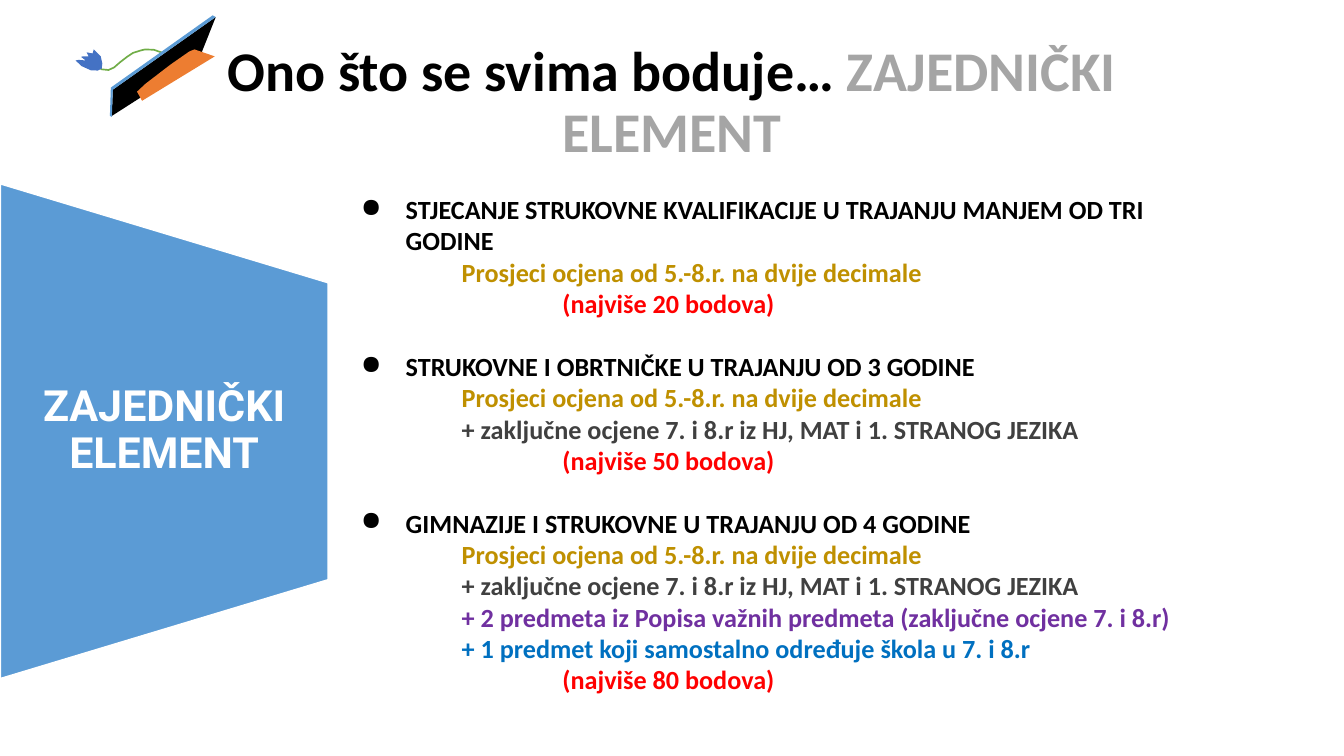
import pptx
import pptx.util
import pptx.dml.color
import pptx.enum.shapes
import pptx.enum.text
import lxml.etree

Pt = pptx.util.Pt
ALIGN = pptx.enum.text.PP_ALIGN
ANCHOR = pptx.enum.text.MSO_ANCHOR
COLORS = {
    "black": "000000", "white": "FFFFFF", "gray": "A5A5A5", "dark": "404040",
    "gold": "BF9000", "red": "FF0000", "purple": "7030A0", "blue": "0070C0",
    "panel": "5B9BD5", "stem": "70AD47", "flower": "4472C4", "orange": "ED7D31",
}
AVERAGE = ("Prosjeci ocjena od 5.-8.r. na dvije decimale", "gold")
GRADES = ("+ zaključne ocjene 7. i 8.r iz HJ, MAT i 1. STRANOG JEZIKA", "dark")
PROGRAMS = [
    ("STJECANJE STRUKOVNE KVALIFIKACIJE U TRAJANJU MANJEM OD TRI GODINE",
     [AVERAGE], "(najviše 20 bodova)"),
    ("STRUKOVNE I OBRTNIČKE U TRAJANJU OD 3 GODINE",
     [AVERAGE, GRADES], "(najviše 50 bodova)"),
    ("GIMNAZIJE I STRUKOVNE U TRAJANJU OD 4 GODINE",
     [AVERAGE, GRADES,
      ("+ 2 predmeta iz Popisa važnih predmeta (zaključne ocjene 7. i 8.r)", "purple"),
      ("+ 1 predmet koji samostalno određuje škola u 7. i 8.r", "blue")],
     "(najviše 80 bodova)"),
]
LINE = 22.4
STEM = [(17, 36.5), (18.5, 38.5), (23.5, 39), (27.5, 37.2), (32, 33.3), (36.7, 29.7),
        (41, 26.8), (46.8, 25), (49.7, 24.3), (56, 24.6), (62.3, 26.8)]
OUTLINES = [
    ("flower", [(13, 24.3), (18, 29.3), (19.1, 34.4), (18.7, 38), (15.8, 39.4),
                (10.8, 39.2), (4.3, 36.2), (0, 32.2), (2.2, 31.8), (7.2, 32.2),
                (4, 29.7), (5, 29.3), (9.4, 29.3), (7.9, 26.4), (12.2, 27.2)]),
    ("black", [(100.1, 1.2), (87.8, 32.2), (25.9, 71.8), (26.6, 53.1)]),
    ("panel", [(97.9, 0), (100.1, 1.2), (26.6, 53.1), (25.9, 72.5), (24.5, 71.8), (25.2, 51.6)]),
    ("orange", [(85, 24.3), (99.4, 29.3), (47.5, 61), (43.9, 54.5), (50, 48.8),
                (68, 35), (81.4, 25.7)]),
]


def rgb(name):
    return pptx.dml.color.RGBColor.from_string(COLORS[name])


def style(r, size, color, font="Calibri"):
    r.font.size = Pt(size)
    r.font.name = font
    r.font.bold = True
    r.font.color.rgb = rgb(color)


def frame(sp, inset_x, inset_y, anchor):
    tf = sp.text_frame
    tf.word_wrap = True
    tf.auto_size = pptx.enum.text.MSO_AUTO_SIZE.NONE
    tf.margin_left = tf.margin_right = Pt(inset_x)
    tf.margin_top = tf.margin_bottom = Pt(inset_y)
    tf.vertical_anchor = anchor
    return tf


def add_title(s, x, y, w, h):
    sp = s.shapes.title
    sp.left, sp.top, sp.width, sp.height = Pt(x), Pt(y), Pt(w), Pt(h)
    p = frame(sp, 7.2, 7.2, ANCHOR.MIDDLE).paragraphs[0]
    p.alignment = ALIGN.CENTER
    p.line_spacing = 0.9
    for text, color in [("Ono što se svima boduje… ", "black"), ("ZAJEDNIČKI ELEMENT", "gray")]:
        r = p.add_run()
        r.text = text
        style(r, 40, color)


def add_panel(s, x, y, w, h):
    sp = s.shapes.add_shape(pptx.enum.shapes.MSO_SHAPE.FLOWCHART_MANUAL_OPERATION,
                            Pt(x + (w - h) / 2), Pt(y + (h - w) / 2), Pt(h), Pt(w))
    sp.rotation = 270
    sp.shadow.inherit = False
    sp.fill.solid()
    sp.fill.fore_color.rgb = rgb("panel")
    sp.line.color.rgb = rgb("white")
    sp.line.width = Pt(1.5)
    label = s.shapes.add_textbox(Pt(x), Pt(y + h / 5), Pt(w), Pt(h * 3 / 5))
    p = frame(label, 15, 0, ANCHOR.MIDDLE).paragraphs[0]
    p.text = "ZAJEDNIČKI ELEMENT"
    p.alignment = ALIGN.CENTER
    p.line_spacing = 0.9
    style(p.runs[0], 30.7, "white", "Roboto")


def add_line(p, text, color, margin, hanging=0, bullet=None):
    p.text = text
    p.line_spacing = Pt(LINE)
    style(p.runs[0], 18.7, color)
    pPr = p._p.get_or_add_pPr()
    pPr.set("marL", str(Pt(margin)))
    pPr.set("indent", str(Pt(-hanging)))
    if bullet:
        ns = pptx.oxml.ns.qn
        clr = lxml.etree.SubElement(pPr, ns("a:buClr"))
        lxml.etree.SubElement(clr, ns("a:srgbClr")).set("val", COLORS["black"])
        lxml.etree.SubElement(pPr, ns("a:buChar")).set("char", bullet)


def add_programs(s, x, y, w, h):
    sp = s.shapes.add_textbox(Pt(x), Pt(y), Pt(w), Pt(h))
    tf = frame(sp, 7.2, 7.2, ANCHOR.TOP)
    for i, (name, parts, limit) in enumerate(PROGRAMS):
        p = tf.add_paragraph() if i else tf.paragraphs[0]
        p.space_before = Pt(LINE if i else 0)
        add_line(p, name, "black", 48, 32, "●")
        for text, color in parts:
            add_line(tf.add_paragraph(), text, color, 88)
        add_line(tf.add_paragraph(), limit, "red", 160)


def add_outline(s, x, y, points, close):
    nodes = [(Pt(x + dx), Pt(y + dy)) for dx, dy in points]
    fb = s.shapes.build_freeform(*nodes[0])
    fb.add_line_segments(nodes[1:], close=close)
    sp = fb.convert_to_shape()
    sp.shadow.inherit = False
    return sp


def add_emblem(s, x, y):
    stem = add_outline(s, x, y, STEM, False)
    stem.fill.background()
    stem.line.color.rgb = rgb("stem")
    stem.line.width = Pt(1.2)
    for color, points in OUTLINES:
        sp = add_outline(s, x, y, points, True)
        sp.fill.solid()
        sp.fill.fore_color.rgb = rgb(color)
        sp.line.fill.background()


def main():
    prs = pptx.Presentation()
    prs.slide_width, prs.slide_height = Pt(960), Pt(540)
    s = prs.slides.add_slide(prs.slide_layouts[5])
    add_programs(s, 234.7, 131, 649.4, 349.2)
    add_title(s, 118, 59.8, 723.6, 28.8)
    add_panel(s, 0, 131, 234.7, 354)
    add_emblem(s, 54, 11)
    prs.save("out.pptx")


if __name__ == "__main__":
    main()
